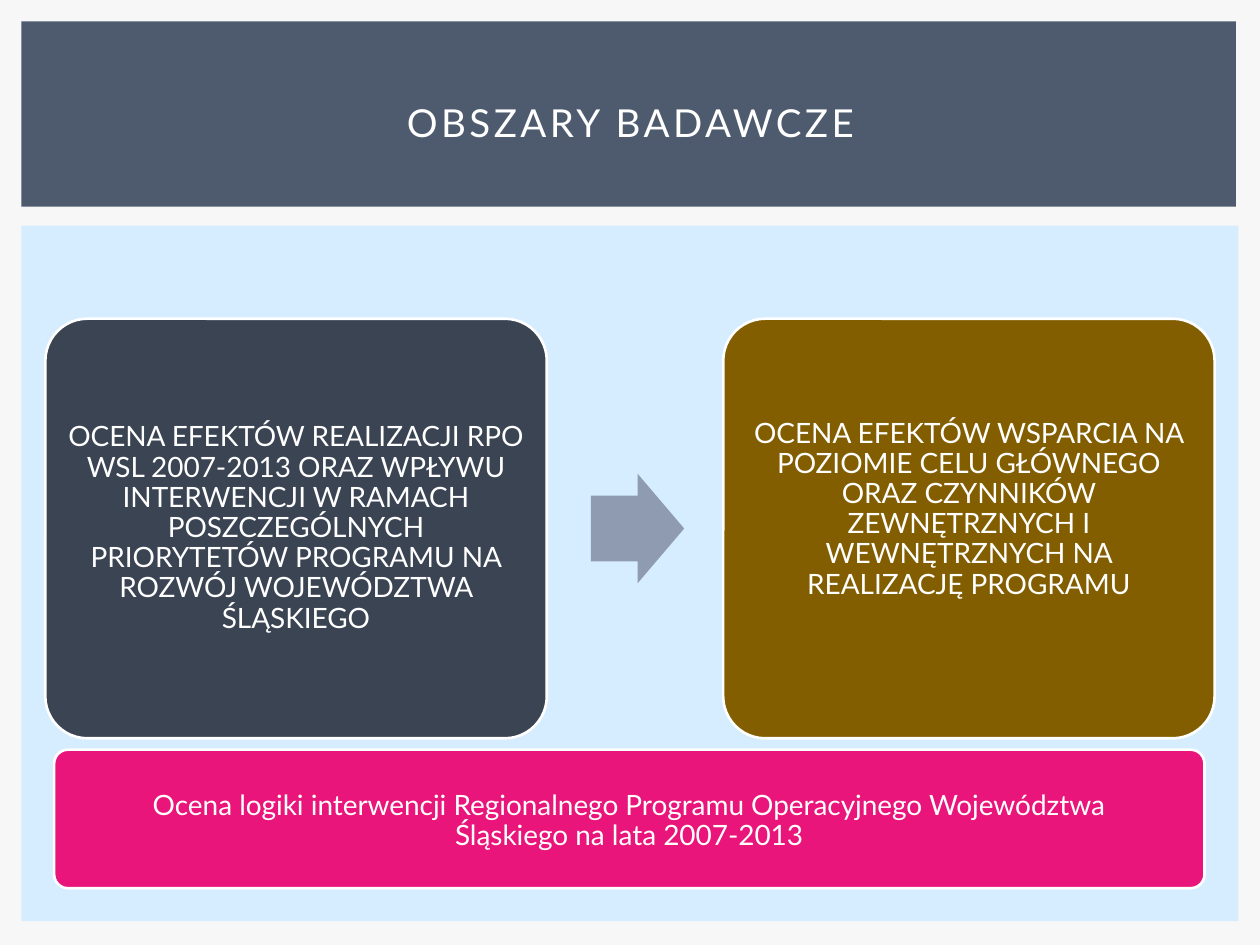
from typing import NamedTuple

from pptx import Presentation
from pptx.dml.color import RGBColor
from pptx.enum.shapes import MSO_SHAPE as Shape
from pptx.enum.text import MSO_ANCHOR as Anchor, MSO_AUTO_SIZE as AutoSize, PP_ALIGN as Align
from pptx.util import Inches, Pt

UNIT = Inches(0.1)
COLUMNS, ROWS = 100, 75
FONT = "Lato"
WHITE = RGBColor(0xFF, 0xFF, 0xFF)
PAPER = RGBColor(0xF7, 0xF7, 0xF7)
SKY = RGBColor(0xD6, 0xEC, 0xFF)
SLATE = RGBColor(0x4E, 0x5B, 0x6F)
NAVY = RGBColor(0x3B, 0x44, 0x53)
OCHRE = RGBColor(0x83, 0x5E, 0x01)
STEEL = RGBColor(0x8E, 0x9B, 0xB0)
PINK = RGBColor(0xEA, 0x15, 0x7A)

EFFECTS = ("OCENA EFEKTÓW REALIZACJI RPO WSL 2007-2013 ORAZ WPŁYWU INTERWENCJI W RAMACH "
           "POSZCZEGÓLNYCH PRIORYTETÓW PROGRAMU NA ROZWÓJ WOJEWÓDZTWA ŚLĄSKIEGO")
SUPPORT = ("OCENA EFEKTÓW WSPARCIA NA POZIOMIE CELU GŁÓWNEGO ORAZ CZYNNIKÓW ZEWNĘTRZNYCH "
           "I WEWNĘTRZNYCH NA REALIZACJĘ PROGRAMU")
LOGIC = ("Ocena logiki interwencji Regionalnego Programu Operacyjnego Województwa "
         "Śląskiego na lata 2007-2013")


class Box(NamedTuple):
    """A region in grid columns and rows."""
    left: float
    top: float
    width: float
    height: float

    def within(self, left, top, width, height):
        """Return a region placed relative to this one."""
        return Box(self.left + left, self.top + top, width, height)

    def lengths(self):
        """Return the region in slide lengths."""
        return [round(value * UNIT) for value in self]


def write(shape, text, size=16, spacing=0, line=0.9, insets=(0.07, 0.07, 0.07, 0.07)):
    """Write centred white text with insets as left, top, right, bottom inches."""
    frame = shape.text_frame
    frame.word_wrap = True
    frame.auto_size = AutoSize.NONE
    frame.vertical_anchor = Anchor.MIDDLE
    (frame.margin_left, frame.margin_top,
     frame.margin_right, frame.margin_bottom) = map(Inches, insets)
    paragraph = frame.paragraphs[0]
    paragraph.alignment = Align.CENTER
    paragraph.line_spacing = line
    run = paragraph.add_run()
    run.text = text
    run.font.name = FONT
    run.font.size = Pt(size)
    run.font.color.rgb = WHITE
    if spacing:
        run.font._element.set("spc", str(spacing * 100))


def draw(slide, kind, box, fill, outlined=False, adjustments=()):
    """Draw a flat preset shape in the box."""
    shape = slide.shapes.add_shape(kind, *box.lengths())
    shape.shadow.inherit = False
    shape.fill.solid()
    shape.fill.fore_color.rgb = fill
    if outlined:
        shape.line.color.rgb = WHITE
        shape.line.width = Pt(1.5)
    else:
        shape.line.fill.background()
    for index, value in enumerate(adjustments):
        shape.adjustments[index] = value
    return shape


def add_card(slide, box, fill, text, **style):
    """Draw a rounded card with its text."""
    card = draw(slide, Shape.ROUNDED_RECTANGLE, box, fill, True, [0.1])
    write(card, text, **style)


def add_header(slide, box):
    """Place the title over its band."""
    band = draw(slide, Shape.RECTANGLE, box, SLATE)
    title = slide.shapes.title
    band._element.addnext(title._element)
    title.left, title.top, title.width, title.height = box.within(2.5, 2.2, 91.7, 11.5).lengths()
    write(title, "OBSZARY BADAWCZE", size=22, spacing=2, line=1, insets=(0.1, 0.05, 0.1, 0.05))


def add_areas(slide, box):
    """Place the two research areas and the arrow between them."""
    add_card(slide, box.within(0, 0, 39.8, box.height), NAVY, EFFECTS)
    draw(slide, Shape.RIGHT_ARROW, box.within(43.3, 12.3, 7.4, 8.7), STEEL,
         adjustments=[0.6, 0.5])
    add_card(slide, box.within(box.width - 39, 0, 39, box.height), OCHRE, SUPPORT,
             insets=(0.07, 0.07, 0.07, 0.37))


def add_body(slide, box):
    """Place the panel with the research areas above the banner."""
    draw(slide, Shape.RECTANGLE, box, SKY)
    add_areas(slide, box.within(1.9, 7.4, 92.8, 33.3))
    add_card(slide, box.within(2.6, 41.6, 91.3, 11), PINK, LOGIC,
             insets=(0.3, 0.1, 0.3, 0.06))


def main():
    """Build and save the slide."""
    deck = Presentation()
    deck.slide_width, deck.slide_height = COLUMNS * UNIT, ROWS * UNIT
    slide = deck.slides.add_slide(deck.slide_layouts[5])
    slide.background.fill.solid()
    slide.background.fill.fore_color.rgb = PAPER
    add_header(slide, Box(1.7, 1.7, 96.4, 14.7))
    add_body(slide, Box(1.7, 17.9, 96.6, 55.2))
    deck.save("out.pptx")


if __name__ == "__main__":
    main()
